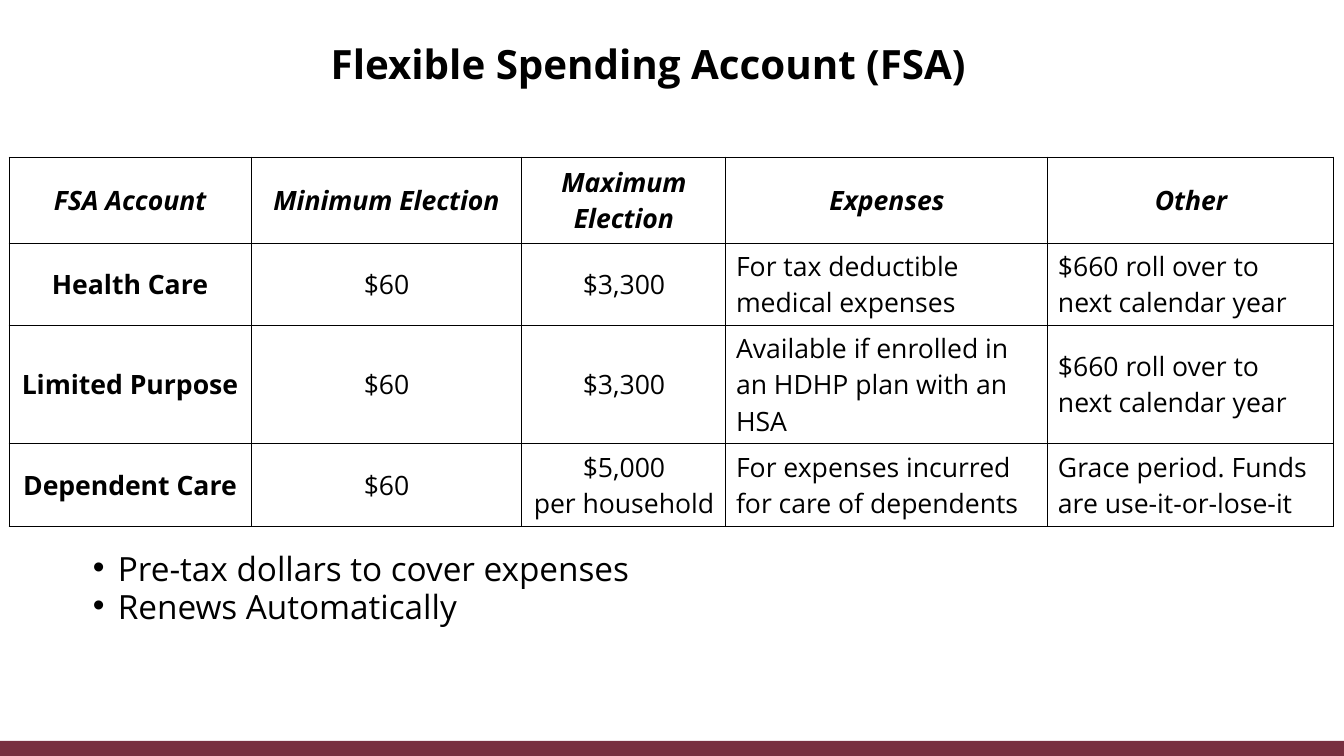
from lxml.etree import SubElement
from pptx import Presentation
from pptx.dml.color import RGBColor as Rgb
from pptx.enum.shapes import MSO_SHAPE as Kind
from pptx.enum.text import MSO_ANCHOR as Anchor, PP_ALIGN as Align
from pptx.oxml import parse_xml
from pptx.oxml.ns import nsdecls, qn
from pptx.util import Pt

THEME = {
    "font": "Open Sans", "ink": Rgb(0, 0, 0), "paper": Rgb(255, 255, 255),
    "bar": Rgb.from_string("782F40"),
    "title": 28.8, "cell": 19, "list": 23.8, "rule": 0.8,
}
PX = 914400 / 100.8
COLS = [242, 271, 204, 322, 286]
ROWS = [86, 82, 118, 82]
# A tilde stands for a space that must not break
DATA = [
    ["FSA Account", "Minimum~Election", "Maximum\nElection", "Expenses", "Other"],
    ["Health Care", "$60", "$3,300", "For tax deductible medical~expenses",
     "$660 roll over to next~calendar year"],
    ["Limited~Purpose", "$60", "$3,300",
     "Available if enrolled in an~HDHP plan with an HSA",
     "$660 roll over to next~calendar year"],
    ["Dependent~Care", "$60", "$5,000 per~household",
     "For expenses incurred for~care~of dependents",
     "Grace period. Funds are~use-it-or-lose-it"],
]
BULLETS = ["Pre-tax dollars to cover expenses", "Renews Automatically"]


def px(*nums):
    """Turn pixels into EMU."""
    return [round(n * PX) for n in nums]


def style(para, size, **form):
    font = para.font
    form = {"name": THEME["font"], "size": Pt(THEME[size]), **form}
    for key, val in form.items():
        setattr(font, key, val)
    font.color.rgb = THEME["ink"]


prs = Presentation()
prs.slide_width, prs.slide_height = px(1344, 756)
slide = prs.slides.add_slide(prs.slide_layouts[5])
shapes = slide.shapes

# Footer bar
bar = shapes.add_shape(Kind.RECTANGLE, *px(0, 741, 1344, 15))
bar.shadow.inherit = False
bar.fill.solid()
bar.fill.fore_color.rgb = THEME["bar"]
bar.line.fill.background()

# Title
title = shapes.title
title.left, title.top, title.width, title.height = px(83, 40, 1131, 53)
frame = title.text_frame
frame.text = "Flexible Spending Account (FSA)"
frame.vertical_anchor = Anchor.MIDDLE
para = frame.paragraphs[0]
para.alignment, para.line_spacing = Align.CENTER, 0.9
style(para, "title", bold=True)

# Account table
box = px(9, 157, sum(COLS), sum(ROWS))
table = shapes.add_table(len(ROWS), len(COLS), *box).table
table.horz_banding = False
for col, wide in zip(table.columns, px(*COLS)):
    col.width = wide
for row, high in zip(table.rows, px(*ROWS)):
    row.height = high

for r, line in enumerate(DATA):
    for c, text in enumerate(line):
        cell = table.cell(r, c)
        cell.text = text.replace("~", chr(160))
        cell.vertical_anchor = Anchor.MIDDLE
        cell.fill.solid()
        cell.fill.fore_color.rgb = THEME["paper"]
        mid = r == 0 or c < 3
        for para in cell.text_frame.paragraphs:
            para.alignment = Align.CENTER if mid else Align.LEFT
            style(para, "cell", bold=r == 0 or c == 0, italic=r == 0)
        props = cell._tc.get_or_add_tcPr()
        for i, side in enumerate("LRTB"):
            props.insert(i, parse_xml(
                f'<a:ln{side} {nsdecls("a")} w="{Pt(THEME["rule"])}"><a:solidFill>'
                f'<a:srgbClr val="{THEME["ink"]}"/></a:solidFill></a:ln{side}>'))

# Bullet list
frame = shapes.add_textbox(*px(83, 554, 1131, 82)).text_frame
frame.word_wrap = True
frame.text = "\n".join(BULLETS)
for i, para in enumerate(frame.paragraphs):
    para.line_spacing = 0.7
    if i:
        para.space_before = Pt(7.3)
    props = para._p.get_or_add_pPr()
    props.set("marL", str(px(25)[0]))
    props.set("indent", str(px(-25)[0]))
    SubElement(props, qn("a:buFont"), typeface="Arial")
    SubElement(props, qn("a:buChar"), char="•")
    style(para, "list")

prs.save("out.pptx")
